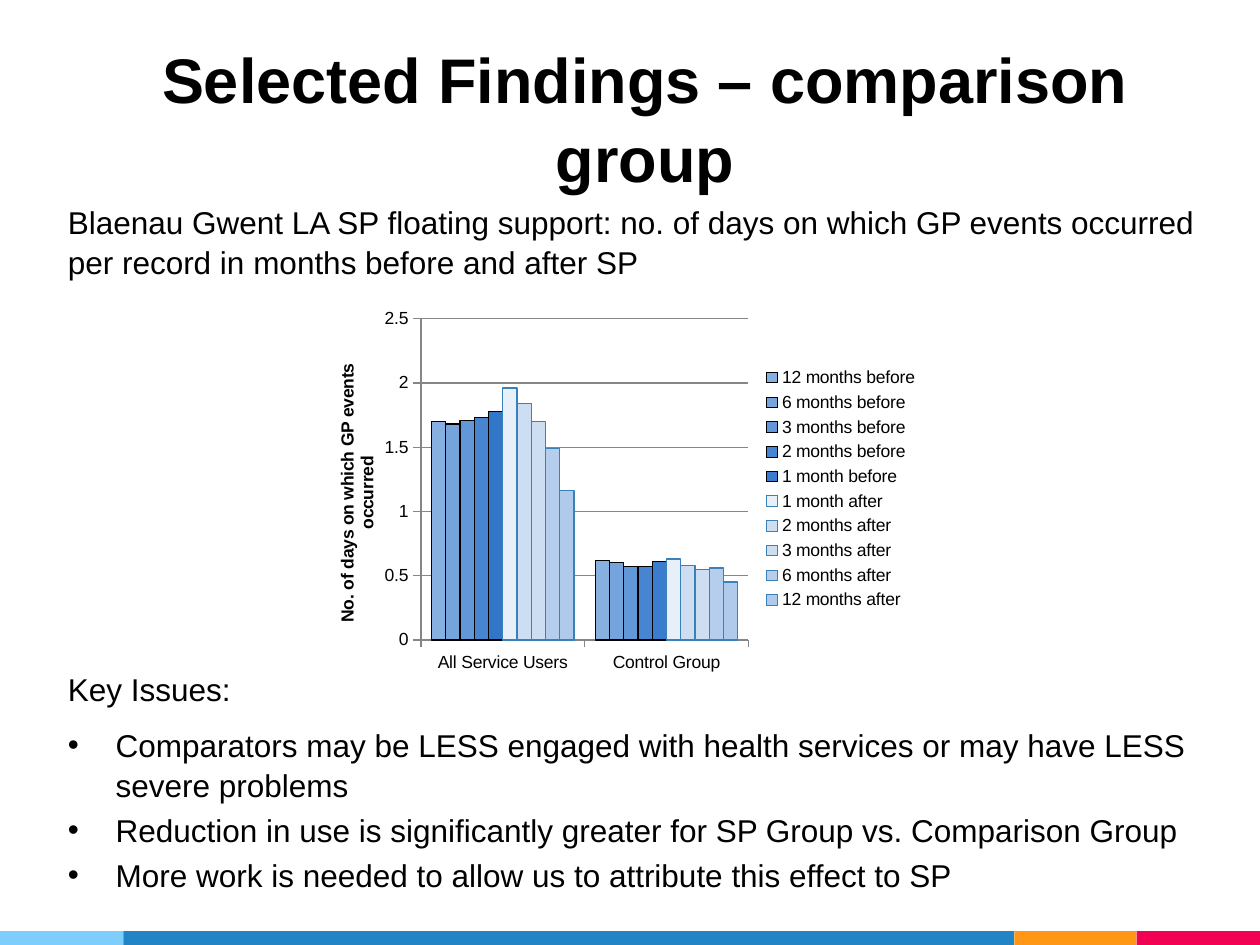
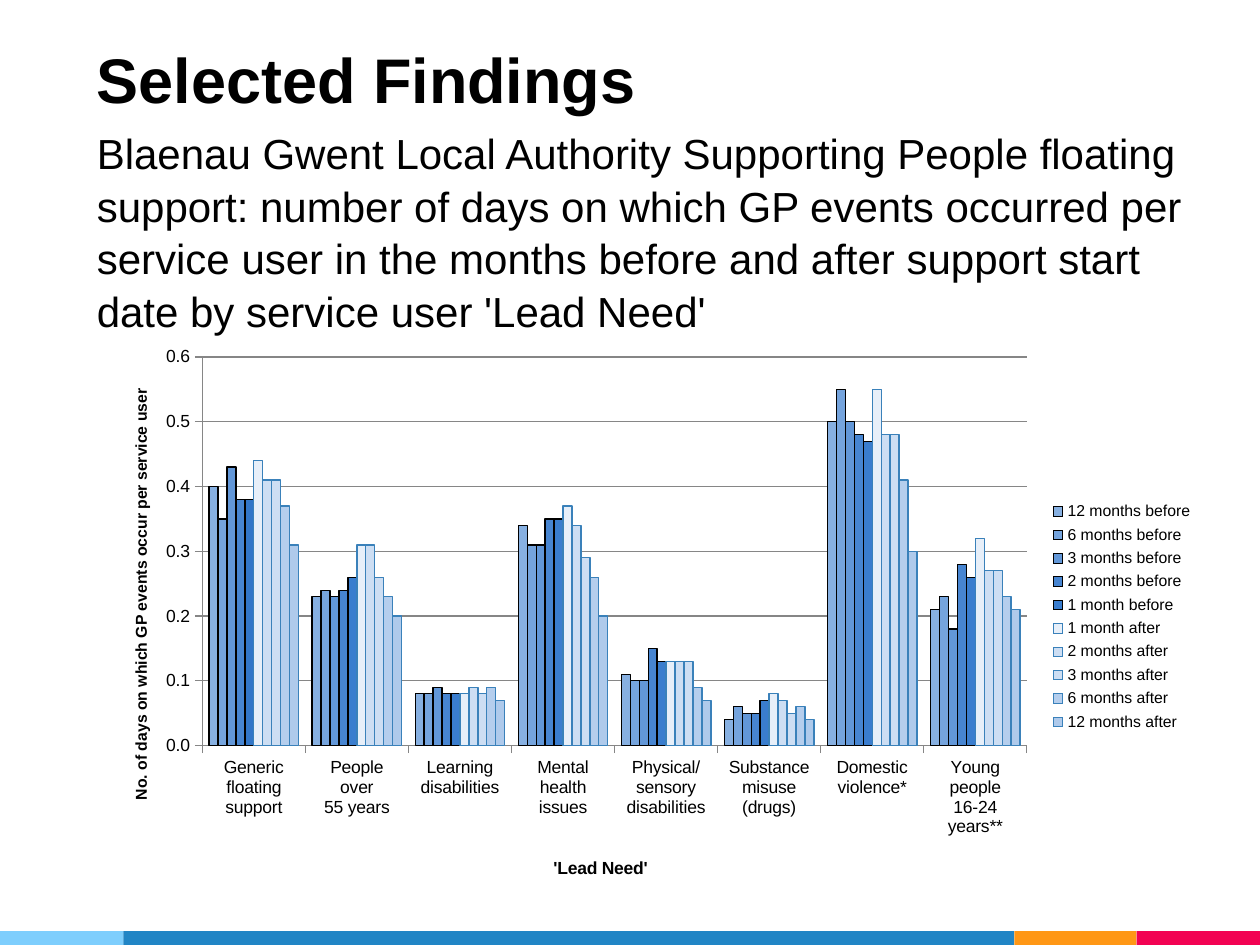
from dataclasses import dataclass

from lxml import etree
from pptx import Presentation
from pptx.chart.data import CategoryChartData
from pptx.dml.color import RGBColor
from pptx.enum.chart import XL_CHART_TYPE as ChartType, XL_LEGEND_POSITION as LegendPosition
from pptx.enum.chart import XL_TICK_MARK as TickMark
from pptx.enum.shapes import MSO_SHAPE as Shape
from pptx.enum.text import PP_ALIGN as Align
from pptx.oxml.ns import qn
from pptx.util import Inches, Pt


@dataclass(frozen=True)
class Theme:
    font: str = "Arial"
    text: str = "000000"
    grid: str = "868686"
    before_line: str = "000000"
    after_line: str = "3A81BA"
    highlight: str = "3276C8"
    title: int = 36
    lead: int = 24
    body: int = 18
    chart: int = 10
    chart_small: int = 9
    line_spacing: float = 1.05


THEME = Theme()
# Width in inches and colour, from left to right
FOOTER_BANDS = [(0.98, "7ECEFD"), (7.07, "2185C5"), (0.97, "FF9715"), (0.98, "F20253")]
BAND_TOP, BAND_HEIGHT = 7.39, 0.11

# Period, fill colour, outline colour
PERIODS = [
    ("12 months before", "87B0E1", THEME.before_line),
    ("6 months before", "75A4DD", THEME.before_line),
    ("3 months before", "6297D8", THEME.before_line),
    ("2 months before", "4785D1", THEME.before_line),
    ("1 month before", "3A7DCE", THEME.before_line),
    ("1 month after", "E7EFF9", THEME.after_line),
    ("2 months after", "CDDEF3", THEME.after_line),
    ("3 months after", "CDDEF3", THEME.after_line),
    ("6 months after", "B5CEED", THEME.after_line),
    ("12 months after", "AFCAEB", THEME.after_line),
]
HIGHLIGHT_PERIOD = "1 month before"

# One row per category, one value per period
COMPARISON = {
    "All Service Users": (1.7, 1.68, 1.71, 1.73, 1.78, 1.96, 1.84, 1.7, 1.49, 1.16),
    "Control Group": (0.62, 0.6, 0.57, 0.57, 0.61, 0.63, 0.58, 0.55, 0.56, 0.45),
}
LEAD_NEEDS = {
    "Generic\nfloating\nsupport": (0.4, 0.35, 0.43, 0.38, 0.38, 0.44, 0.41, 0.41, 0.37, 0.31),
    "People\nover\n55 years": (0.23, 0.24, 0.23, 0.24, 0.26, 0.31, 0.31, 0.26, 0.23, 0.2),
    "Learning\ndisabilities": (0.08, 0.08, 0.09, 0.08, 0.08, 0.08, 0.09, 0.08, 0.09, 0.07),
    "Mental\nhealth\nissues": (0.34, 0.31, 0.31, 0.35, 0.35, 0.37, 0.34, 0.29, 0.26, 0.2),
    "Physical/\nsensory\ndisabilities": (0.11, 0.1, 0.1, 0.15, 0.13, 0.13, 0.13, 0.13, 0.09, 0.07),
    "Substance\nmisuse\n(drugs)": (0.04, 0.06, 0.05, 0.05, 0.07, 0.08, 0.07, 0.05, 0.06, 0.04),
    "Domestic\nviolence*": (0.5, 0.55, 0.5, 0.48, 0.47, 0.55, 0.48, 0.48, 0.41, 0.3),
    "Young\npeople\n16-24 years**": (0.21, 0.23, 0.18, 0.28, 0.26, 0.32, 0.27, 0.27, 0.23, 0.21),
}


def rgb(colour):
    return RGBColor.from_string(colour)


def set_all(target, values):
    for name, value in values.items():
        setattr(target, name, value)


def set_font(font, size, bold=False):
    set_all(font, {"name": THEME.font, "size": Pt(size), "bold": bold})
    font.color.rgb = rgb(THEME.text)


def add_bands(slide):
    left = 0
    for width, colour in FOOTER_BANDS:
        band = slide.shapes.add_shape(Shape.RECTANGLE, Inches(left), Inches(BAND_TOP),
                                      Inches(width), Inches(BAND_HEIGHT))
        band.shadow.inherit = False
        band.fill.solid()
        band.fill.fore_color.rgb = rgb(colour)
        band.line.fill.background()
        left += width


def add_text_frame(slide, box):
    frame = slide.shapes.add_textbox(*map(Inches, box)).text_frame
    frame.word_wrap = True
    return frame


def write(paragraph, text, size, bold=False, **spacing):
    run = paragraph.add_run()
    run.text = text
    set_font(run.font, size, bold)
    set_all(paragraph, {"line_spacing": THEME.line_spacing, **spacing})


def add_title(slide, text, height, alignment=Align.LEFT):
    frame = add_text_frame(slide, (0.67, 0.24, 8.9, height))
    write(frame.paragraphs[0], text, THEME.title, bold=True, alignment=alignment)


def add_intro(slide, text, box, size):
    write(add_text_frame(slide, box).paragraphs[0], text, size)


def make_bullet(paragraph, indent):
    properties = paragraph._p.get_or_add_pPr()
    properties.set("marL", str(Inches(indent)))
    properties.set("indent", str(-Inches(indent)))
    etree.SubElement(properties, qn("a:buFont")).set("typeface", THEME.font)
    etree.SubElement(properties, qn("a:buChar")).set("char", "•")


def add_key_issues(slide, heading, issues, box):
    frame = add_text_frame(slide, box)
    write(frame.paragraphs[0], heading, THEME.body, space_after=Pt(6))
    for number, issue in enumerate(issues):
        paragraph = frame.add_paragraph()
        write(paragraph, issue, THEME.body,
              space_before=Pt(0 if number else 3.6), space_after=Pt(3))
        make_bullet(paragraph, 0.38)


def place(element, index, **fractions):
    """Fix the place of a chart part as fractions of the chart."""
    for old in element.findall(qn("c:layout")):
        element.remove(old)
    layout = etree.Element(qn("c:layout"))
    manual = etree.SubElement(layout, qn("c:manualLayout"))
    values = {"xMode": "edge", "yMode": "edge", **fractions}
    if "w" in fractions:
        values = {"layoutTarget": "inner", **values}
    for tag, value in values.items():
        etree.SubElement(manual, qn(f"c:{tag}")).set("val", str(value))
    element.insert(index, layout)


def add_axis_title(axis, text, size, x, y):
    paragraph = axis.axis_title.text_frame.paragraphs[0]
    run = paragraph.add_run()
    run.text = text
    set_font(run.font, size, bold=True)
    place(axis.axis_title._element, 1, x=x, y=y)


def format_axis(axis):
    set_all(axis, {"major_tick_mark": TickMark.OUTSIDE, "minor_tick_mark": TickMark.NONE})
    set_font(axis.tick_labels.font, THEME.chart)
    format_line(axis.format.line, THEME.grid)


def format_line(line, colour):
    line.color.rgb = rgb(colour)
    line.width = Pt(0.75)


def fill(part, colour, outline):
    part.format.fill.solid()
    part.format.fill.fore_color.rgb = rgb(colour)
    format_line(part.format.line, outline)


def add_period_chart(slide, rows, box, plot, scale, number_format, legend_size):
    """Clustered columns: one cluster per row, one column per period."""
    data = CategoryChartData()
    data.categories = list(rows)
    for (period, _, _), values in zip(PERIODS, zip(*rows.values())):
        data.add_series(period, values)
    chart = slide.shapes.add_chart(ChartType.COLUMN_CLUSTERED, *map(Inches, box), data).chart
    set_all(chart, {"has_title": False, "has_legend": True})
    set_font(chart.font, THEME.chart)
    set_all(chart.legend, {"position": LegendPosition.RIGHT, "include_in_layout": False})
    set_font(chart.legend.font, legend_size)

    columns = chart.plots[0]
    set_all(columns, {"gap_width": 150, "overlap": 0, "vary_by_categories": False})
    for series, (period, colour, outline) in zip(columns.series, PERIODS):
        fill(series, colour, outline)
        series.invert_if_negative = False
        if period == HIGHLIGHT_PERIOD:
            fill(series.points[0], THEME.highlight, outline)

    format_axis(chart.category_axis)
    days = chart.value_axis
    format_axis(days)
    maximum, step = scale
    set_all(days, {"minimum_scale": 0, "maximum_scale": maximum, "major_unit": step,
                   "has_major_gridlines": True})
    format_line(days.major_gridlines.format.line, THEME.grid)
    set_all(days.tick_labels, {"number_format": number_format,
                               "number_format_is_linked": False})
    place(chart._chartSpace.chart.plotArea, 0, **plot)
    return chart


def add_slide(deck):
    slide = deck.slides.add_slide(deck.slide_layouts[6])
    add_bands(slide)
    return slide


def build_comparison(deck):
    slide = add_slide(deck)
    add_title(slide, "Selected Findings – comparison group", 1.31, Align.CENTER)
    add_intro(slide, "Blaenau Gwent LA SP floating support: no. of days on which GP events "
              "occurred per record in months before and after SP",
              (0.44, 1.55, 9.37, 0.75), THEME.body)
    chart = add_period_chart(slide, COMPARISON, (2.39, 2.38, 5, 3),
                             {"x": 0.19, "y": 0.05, "w": 0.52, "h": 0.85},
                             (2.5, 0.5), "General", THEME.chart)
    add_axis_title(chart.value_axis, "No. of days on which GP events occurred",
                   THEME.chart, 0.05, 0.16)
    add_key_issues(slide, "Key Issues:", [
        "Comparators may be LESS engaged with health services or may have LESS severe problems",
        "Reduction in use is significantly greater for SP Group vs. Comparison Group",
        "More work is needed to allow us to attribute this effect to SP",
    ], (0.44, 5.25, 9.37, 1.95))


def build_lead_needs(deck):
    slide = add_slide(deck)
    add_title(slide, "Selected Findings", 0.71)
    add_intro(slide, "Blaenau Gwent Local Authority Supporting People floating support: number "
              "of days on which GP events occurred per service user in the months before and "
              "after support start date by service user 'Lead Need'",
              (0.67, 0.94, 9.03, 1.72), THEME.lead)
    chart = add_period_chart(slide, LEAD_NEEDS, (0.75, 2.66, 8.82, 4.47),
                             {"x": 0.097, "y": 0.039, "w": 0.742, "h": 0.69},
                             (0.6, 0.1), "0.0", THEME.chart_small)
    add_axis_title(chart.value_axis, "No. of days on which GP events occur per service user",
                   THEME.chart_small, 0.03, 0.09)
    add_axis_title(chart.category_axis, "'Lead Need'", THEME.chart, 0.41, 0.92)


def main():
    deck = Presentation()
    set_all(deck, {"slide_width": Inches(10), "slide_height": Inches(7.5)})
    build_comparison(deck)
    build_lead_needs(deck)
    deck.save("out.pptx")


if __name__ == "__main__":
    main()
